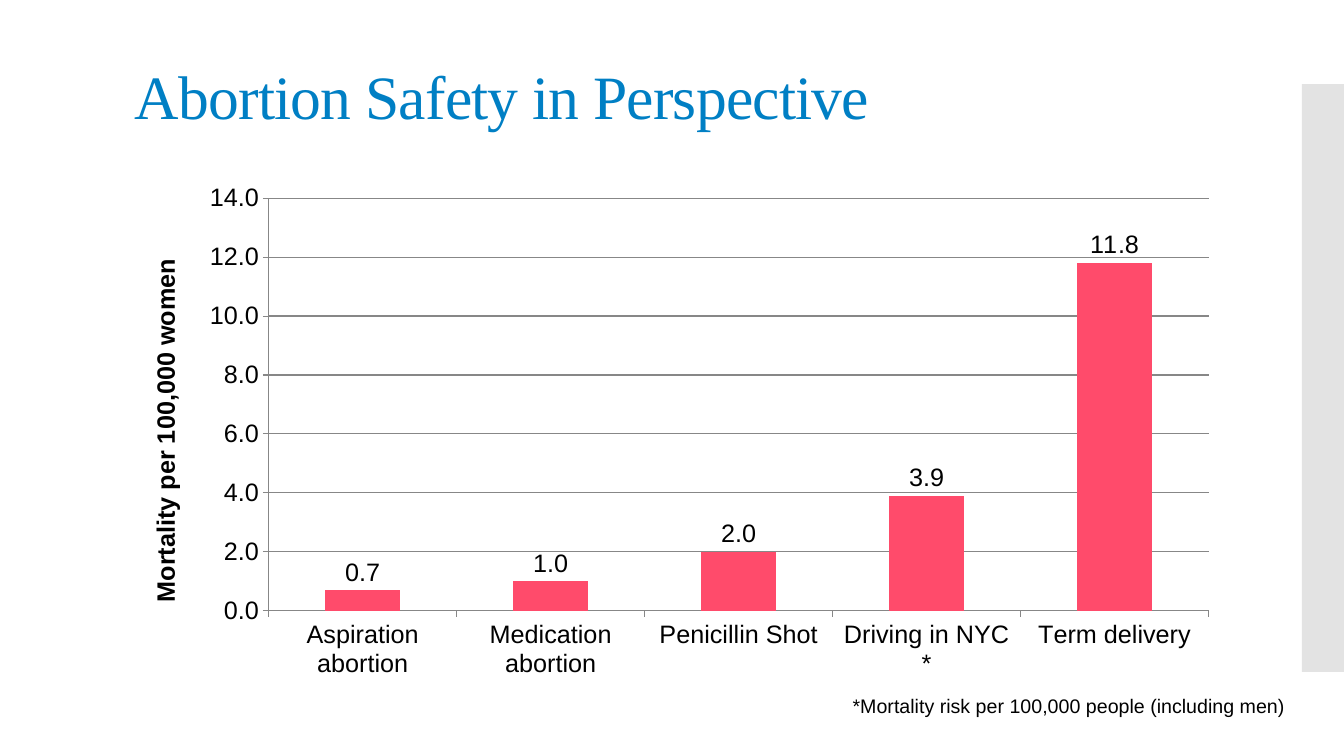
"""Build the slide with a column chart comparing mortality risks."""
from lxml.etree import SubElement
from pptx import Presentation
from pptx.chart.data import CategoryChartData
from pptx.dml.color import RGBColor
from pptx.enum.chart import XL_CHART_TYPE, XL_LABEL_POSITION, XL_TICK_MARK
from pptx.enum.shapes import MSO_SHAPE
from pptx.enum.text import MSO_ANCHOR
from pptx.oxml import parse_xml
from pptx.oxml.ns import nsdecls, qn
from pptx.util import Pt

COLORS = {"title": "007FC4", "bars": "FF4B6B", "band": "C8C8C8",
          "lines": "878787", "text": "000000"}


def style(font, size, color, name="Arial", bold=False):
    font.name, font.size, font.bold = name, Pt(size), bold
    font.color.rgb = RGBColor.from_string(COLORS[color])


def add_text(left, top, width, height, text, size, color, name="Arial", wrap=True):
    frame = slide.shapes.add_textbox(Pt(left), Pt(top), Pt(width), Pt(height)).text_frame
    frame.word_wrap = wrap
    frame.vertical_anchor = MSO_ANCHOR.MIDDLE
    frame.text = text
    style(frame.paragraphs[0].runs[0].font, size, color, name)
    return frame.paragraphs[0]


deck = Presentation()
deck.slide_width, deck.slide_height = Pt(960), Pt(540)
slide = deck.slides.add_slide(deck.slide_layouts[6])

band = slide.shapes.add_shape(MSO_SHAPE.RECTANGLE, Pt(930), Pt(60), Pt(30), Pt(420))
band.shadow.inherit = False
band.line.fill.background()
band.fill.solid()
band.fill.fore_color.rgb = RGBColor.from_string(COLORS["band"])
band_color = band.fill._xPr.find(".//" + qn("a:srgbClr"))
SubElement(band_color, qn("a:alpha"), val="50000")

risks = CategoryChartData(number_format="0.0")
risks.categories = ["Aspiration abortion", "Medication abortion", "Penicillin Shot",
                    "Driving in NYC *", "Term delivery"]
risks.add_series("Series 1", [0.7, 1, 2, 3.9, 11.8])
chart = slide.shapes.add_chart(XL_CHART_TYPE.COLUMN_CLUSTERED, Pt(89.3), Pt(123.1),
                               Pt(789.8), Pt(368.6), risks).chart
style(chart.font, 18, "text")
chart.has_legend = False
chart.has_title = False

plot = chart.plots[0]
plot.gap_width = 150
plot.vary_by_categories = False
bars = plot.series[0].format.fill
bars.solid()
bars.fore_color.rgb = RGBColor.from_string(COLORS["bars"])
plot.has_data_labels = True
labels = plot.data_labels
labels.show_value = True
labels.number_format, labels.number_format_is_linked = "0.0", False
labels.position = XL_LABEL_POSITION.OUTSIDE_END
style(labels.font, 18, "text")

mortality = chart.value_axis
mortality.minimum_scale, mortality.maximum_scale, mortality.major_unit = 0, 14, 2
mortality.has_major_gridlines = True
mortality.tick_labels.number_format = "0.0"
mortality.tick_labels.number_format_is_linked = False
mortality_title = mortality.axis_title.text_frame
mortality_title.text = "Mortality per 100,000 women"
style(mortality_title.paragraphs[0].runs[0].font, 18, "text", bold=True)
for axis in (chart.category_axis, mortality):
    axis.major_tick_mark = XL_TICK_MARK.OUTSIDE
    style(axis.tick_labels.font, 18, "text")
for ruled in (chart.category_axis, mortality, mortality.major_gridlines):
    ruled.format.line.color.rgb = RGBColor.from_string(COLORS["lines"])
    ruled.format.line.width = Pt(0.75)

plot_area = chart._chartSpace.chart.plotArea
for layout in plot_area.findall(qn("c:layout")):
    plot_area.remove(layout)
plot_area.insert(0, parse_xml(
    f'<c:layout {nsdecls("c")}><c:manualLayout><c:layoutTarget val="inner"/>'
    '<c:xMode val="edge"/><c:yMode val="edge"/><c:x val="0.13"/><c:y val="0.05"/>'
    '<c:w val="0.85"/><c:h val="0.8"/></c:manualLayout></c:layout>'))

title = add_text(89.3, 19.4, 553, 103.7, "Abortion Safety in Perspective", 44, "title",
                 "Times New Roman")
title.line_spacing = 0.9
title.runs[0].font._element.set("spc", "-60")

add_text(601.9, 491.8, 324.7, 24.5, "*Mortality risk per 100,000 people (including men)",
         14, "text", wrap=False)

deck.save("out.pptx")
